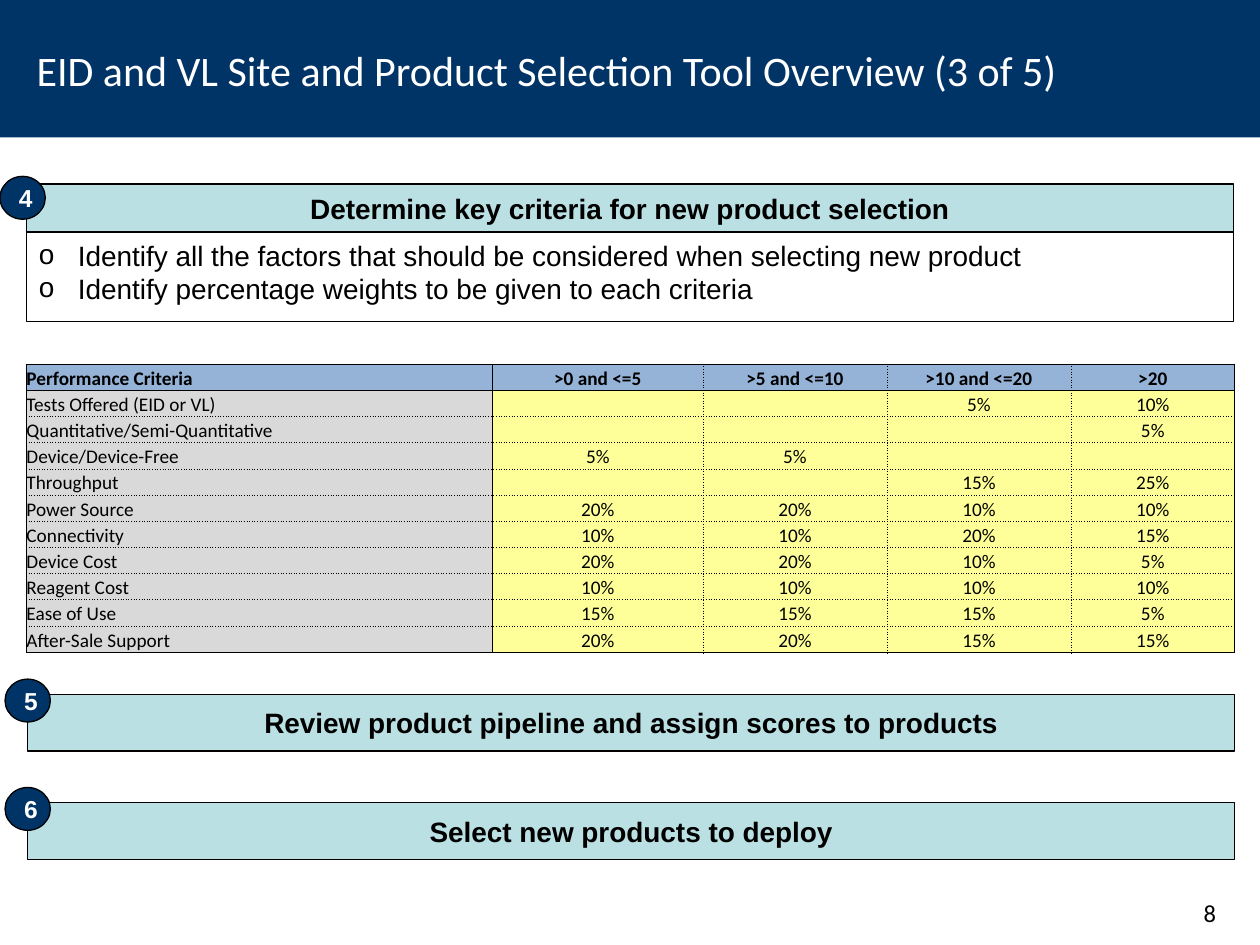
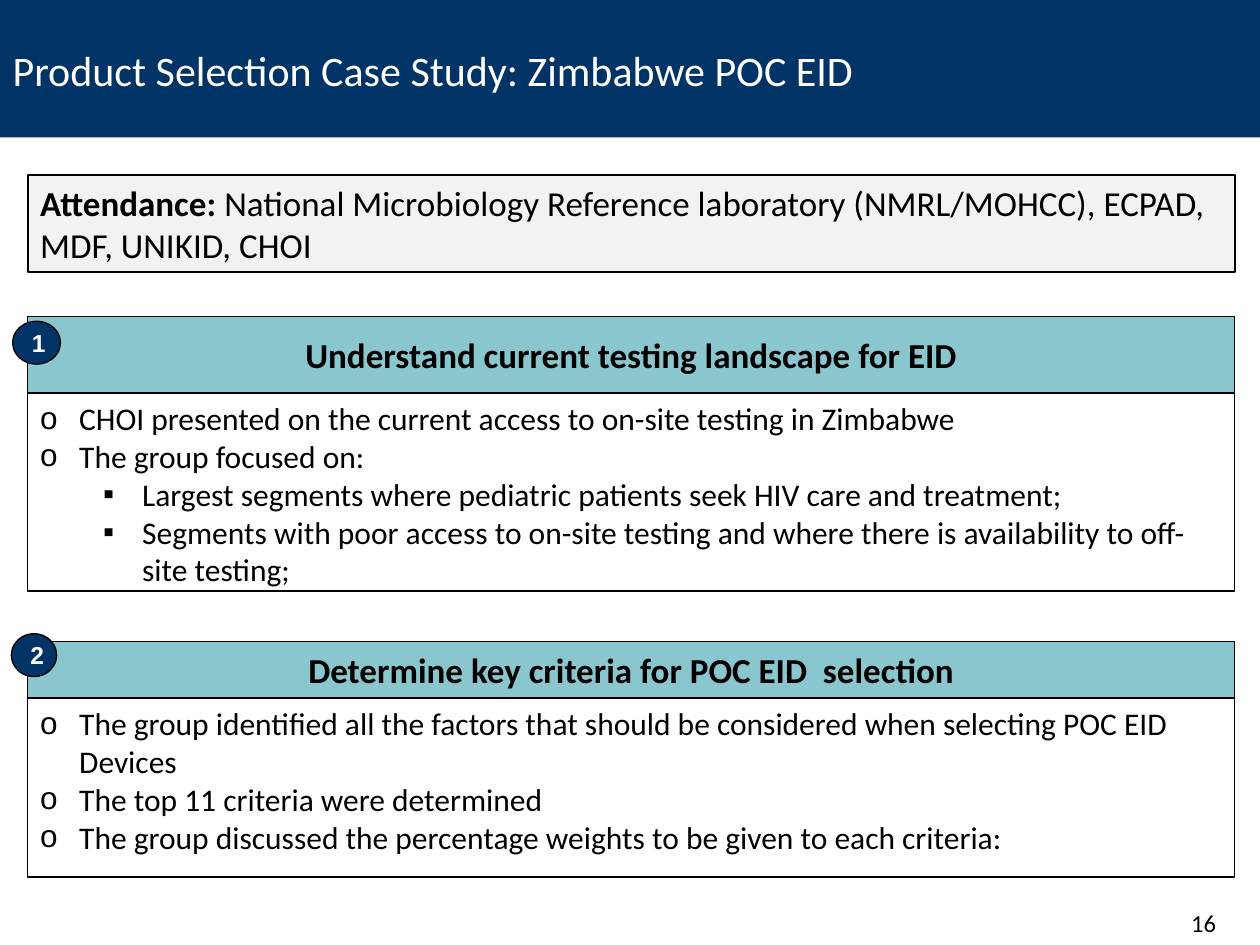
import lxml.etree
import pptx
import pptx.dml.color
import pptx.enum.shapes
import pptx.enum.text
import pptx.oxml.ns
import pptx.util

Inches = pptx.util.Inches
Pt = pptx.util.Pt
qn = pptx.oxml.ns.qn
LEFT, CENTER, RIGHT = (
    pptx.enum.text.PP_ALIGN.LEFT,
    pptx.enum.text.PP_ALIGN.CENTER,
    pptx.enum.text.PP_ALIGN.RIGHT,
)
TOP, MIDDLE, BOTTOM = (
    pptx.enum.text.MSO_ANCHOR.TOP,
    pptx.enum.text.MSO_ANCHOR.MIDDLE,
    pptx.enum.text.MSO_ANCHOR.BOTTOM,
)
RECT = pptx.enum.shapes.MSO_SHAPE.RECTANGLE
OVAL = pptx.enum.shapes.MSO_SHAPE.OVAL

NAVY, WHITE, BLACK = "003366", "FFFFFF", "000000"
PALE_TEAL, TEAL, PALE_GRAY = "BBE0E3", "8AC6CD", "F2F2F2"
HEADER_BLUE, CRITERIA_GRAY, WEIGHT_YELLOW = "95B3D7", "D9D9D9", "FFFF99"

WIDE = 9.58
BULLETS = [("o", 0.31), ("▪", 0.81)]
HANGING = 0.31


def paint(color_holder, hex_color):
    if hasattr(color_holder, "solid"):
        color_holder.solid()
        color_holder = color_holder.fore_color
    else:
        color_holder = color_holder.color
    color_holder.rgb = pptx.dml.color.RGBColor.from_string(hex_color)


def write(paragraph, text, size, name="Calibri", bold=False, color=BLACK, align=LEFT):
    paragraph.alignment = align
    run = paragraph.add_run()
    run.text = text
    for attribute, value in {"size": Pt(size), "name": name, "bold": bold}.items():
        setattr(run.font, attribute, value)
    paint(run.font, color)


deck = pptx.Presentation()
deck.slide_width, deck.slide_height = Inches(10), Inches(7.5)
layout = deck.slide_layouts[5]
title_place = {"left": Inches(0), "top": Inches(0), "width": Inches(10), "height": Inches(1.1)}
for attribute, value in title_place.items():
    setattr(layout.placeholders[0], attribute, value)

badge_style = {"size": 14, "name": "Arial", "bold": True, "color": WHITE, "align": CENTER}
overview_heading = {"size": 16, "name": "Arial", "bold": True, "align": CENTER}
overview_list = {"size": 16, "name": "Arial"}
case_heading = {"size": 20, "bold": True, "align": CENTER}
case_list = {"size": 18}

pages = [
    {
        "title": "EID and VL Site and Product Selection Tool Overview (3 of 5)",
        "indent": 0.19,
        "number": "8",
        "number_top": 7.08,
        "heading_style": overview_heading,
        "list_style": overview_list,
        "heading_fill": PALE_TEAL,
        "steps": [
            ("5", (0.04, 5.39, 0.36), "Review product pipeline and assign scores to products",
             (0.22, 5.51, 0.45), 0, []),
            ("4", (0, 1.4, 0.36), "Determine key criteria for new product selection",
             (0.21, 1.46, 0.38), 0.71, [
                (0, "Identify all the factors that should be considered when selecting new product"),
                (0, "Identify percentage weights to be given to each criteria"),
            ]),
            ("6", (0.04, 6.25, 0.36), "Select new products to deploy",
             (0.22, 6.37, 0.45), 0, []),
        ],
    },
    {
        "title": "Product Selection Case Study: Zimbabwe POC EID",
        "indent": 0,
        "number": "16",
        "number_top": 7.16,
        "heading_style": case_heading,
        "list_style": case_list,
        "heading_fill": TEAL,
        "steps": [
            ("1", (0.1, 2.55, 0.38), "Understand current testing landscape for EID",
             (0.22, 2.51, 0.61), 1.57, [
                (0, "CHOI presented on the current access to on-site testing in Zimbabwe"),
                (0, "The group focused on:"),
                (1, "Largest segments where pediatric patients seek HIV care and treatment;"),
                (1, "Segments with poor access to on-site testing and where there is "
                    "availability to off-site testing;"),
            ]),
            ("2", (0.09, 5.03, 0.36), "Determine key criteria for POC EID  selection",
             (0.22, 5.09, 0.45), 1.42, [
                (0, "The group identified all the factors that should be considered when "
                    "selecting POC EID Devices"),
                (0, "The top 11 criteria were determined"),
                (0, "The group discussed the percentage weights to be given to each criteria:"),
            ]),
        ],
    },
]

slides = []
for page in pages:
    slide = deck.slides.add_slide(layout)
    slides.append(slide)
    title = slide.shapes.title.text_frame
    title.vertical_anchor = MIDDLE
    write(title.paragraphs[0], page["title"], 24, color=WHITE)
    title.paragraphs[0]._p.get_or_add_pPr().set("marL", str(Inches(page["indent"])))

    number = slide.shapes.add_textbox(
        Inches(7.67), Inches(page["number_top"]), Inches(2.08), Inches(0.5)).text_frame
    number.word_wrap = True
    write(number.paragraphs[0], page["number"], 14, align=RIGHT)

    for step, badge, heading, (left, top, height), list_height, points in page["steps"]:
        parts = [(RECT, (left, top, WIDE, height), page["heading_fill"], MIDDLE,
                  [(None, heading)], page["heading_style"])]
        if points:
            parts.append((RECT, (left, top + height, WIDE, list_height), None, TOP,
                          points, page["list_style"]))
        parts.append((OVAL, (*badge, 0.34), NAVY, MIDDLE, [(None, step)], badge_style))
        for outline, place, fill, anchor, lines, style in parts:
            part = slide.shapes.add_shape(outline, *map(Inches, place))
            part.shadow.inherit = False
            part.line.width = Pt(0.75)
            paint(part.line, BLACK)
            if fill:
                paint(part.fill, fill)
            else:
                part.fill.background()
            frame = part.text_frame
            frame.word_wrap = True
            frame.vertical_anchor = anchor
            for index, (level, text) in enumerate(lines):
                paragraph = frame.add_paragraph() if index else frame.paragraphs[0]
                write(paragraph, text, **style)
                if level is not None:
                    mark, indent = BULLETS[level]
                    paragraph.level = level
                    properties = paragraph._p.get_or_add_pPr()
                    properties.set("marL", str(Inches(indent)))
                    properties.set("indent", str(-Inches(HANGING)))
                    lxml.etree.SubElement(properties, qn("a:buFont"), typeface="Arial")
                    lxml.etree.SubElement(properties, qn("a:buChar"), char=mark)

overview, case_study = slides

band = overview.shapes.add_shape(RECT, Inches(0), Inches(0), Inches(10), Inches(1.09))
band.shadow.inherit = False
paint(band.fill, NAVY)
band.line.fill.background()
layout.shapes.element.insert(2, band.element)

attendance = case_study.shapes.add_shape(
    RECT, Inches(0.22), Inches(1.39), Inches(WIDE), Inches(0.77))
attendance.shadow.inherit = False
paint(attendance.fill, PALE_GRAY)
paint(attendance.line, BLACK)
attendance.line.width = Pt(1)
attendance.text_frame.word_wrap = True
attendance.text_frame.vertical_anchor = TOP
attendees = attendance.text_frame.paragraphs[0]
write(attendees, "Attendance: ", 20, bold=True)
write(attendees, "National Microbiology Reference laboratory (NMRL/MOHCC), ECPAD, MDF, UNIKID, CHOI", 20)

weights = [
    ("Performance Criteria", ">0 and <=5", ">5 and <=10", ">10 and <=20", ">20"),
    ("Tests Offered (EID or VL)", "", "", "5%", "10%"),
    ("Quantitative/Semi-Quantitative", "", "", "", "5%"),
    ("Device/Device-Free", "5%", "5%", "", ""),
    ("Throughput", "", "", "15%", "25%"),
    ("Power Source", "20%", "20%", "10%", "10%"),
    ("Connectivity", "10%", "10%", "20%", "15%"),
    ("Device Cost", "20%", "20%", "10%", "5%"),
    ("Reagent Cost", "10%", "10%", "10%", "10%"),
    ("Ease of Use", "15%", "15%", "15%", "5%"),
    ("After-Sale Support", "20%", "20%", "15%", "15%"),
]
row_count, column_count = len(weights), len(weights[0])
solid_rows, solid_columns = {0, 1, row_count}, {0, 1, column_count}
criteria = overview.shapes.add_table(
    row_count, column_count, Inches(0.21), Inches(2.89), Inches(WIDE), Inches(2.29)).table
for column, width in zip(criteria.columns, (3.7, 1.67, 1.46, 1.46, 1.3)):
    column.width = Inches(width)
for r, row in enumerate(weights):
    criteria.rows[r].height = Inches(2.29 / row_count)
    for c, text in enumerate(row):
        cell = criteria.cell(r, c)
        for side in ("left", "right", "top", "bottom"):
            setattr(cell, "margin_" + side, 0)
        cell.vertical_anchor = BOTTOM
        paint(cell.fill, HEADER_BLUE if r == 0 else WEIGHT_YELLOW if c else CRITERIA_GRAY)
        paragraph = cell.text_frame.paragraphs[0]
        if text:
            write(paragraph, text, 11, bold=r == 0, align=CENTER if c else LEFT)
        else:
            lxml.etree.SubElement(paragraph._p, qn("a:endParaRPr"), sz="1100")
        edges = {
            "a:lnL": c in solid_columns,
            "a:lnR": c + 1 in solid_columns,
            "a:lnT": r in solid_rows,
            "a:lnB": r + 1 in solid_rows,
        }
        for position, (edge, is_solid) in enumerate(edges.items()):
            border = lxml.etree.Element(qn(edge), w=str(Pt(0.5)))
            ink = lxml.etree.SubElement(border, qn("a:solidFill"))
            lxml.etree.SubElement(ink, qn("a:srgbClr"), val=BLACK)
            lxml.etree.SubElement(border, qn("a:prstDash"), val="solid" if is_solid else "sysDot")
            cell._tc.get_or_add_tcPr().insert(position, border)

deck.save("out.pptx")
